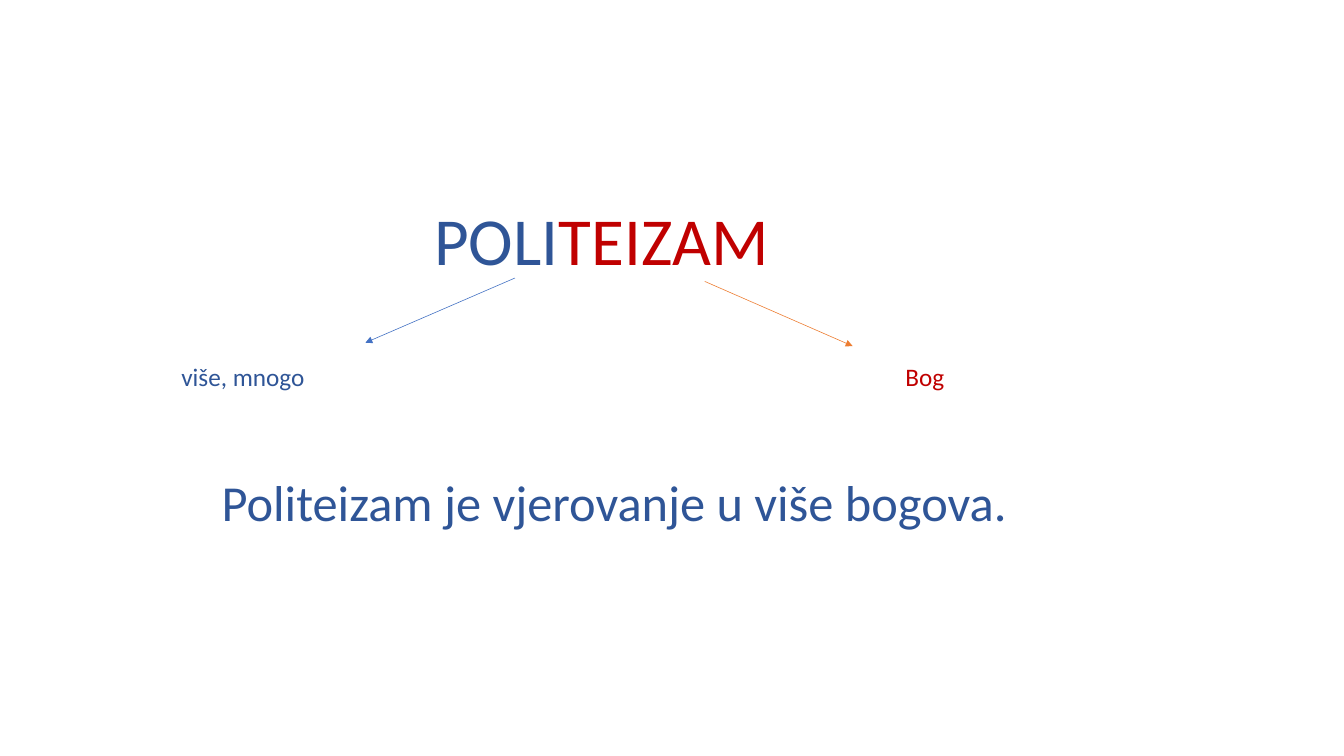
from lxml import etree
from pptx import Presentation
from pptx.dml.color import RGBColor
from pptx.enum.shapes import MSO_CONNECTOR
from pptx.enum.text import MSO_ANCHOR, MSO_AUTO_SIZE, PP_ALIGN
from pptx.oxml.ns import qn
from pptx.util import Inches, Pt

BLUE = RGBColor(0x2F, 0x55, 0x97)
RED = RGBColor(0xC0, 0x00, 0x00)
ARROW_BLUE = RGBColor(0x44, 0x72, 0xC4)
ARROW_ORANGE = RGBColor(0xED, 0x7D, 0x31)


def add_run(p, text, size, color):
    r = p.add_run()
    r.text = text
    r.font.name = "Calibri"
    r.font.size = Pt(size)
    r.font.color.rgb = color


prs = Presentation()
prs.slide_width = Inches(16)
prs.slide_height = Inches(9)
s = prs.slides.add_slide(prs.slide_layouts[5])

title = s.shapes.title
title.left, title.top = Inches(5.07), Inches(1.94)
title.width, title.height = Inches(8.4), Inches(1.43)
tf = title.text_frame
tf.auto_size = MSO_AUTO_SIZE.NONE
tf.vertical_anchor = MSO_ANCHOR.BOTTOM
p = tf.paragraphs[0]
p.alignment = PP_ALIGN.LEFT
add_run(p, "POLI", 57.6, BLUE)
add_run(p, "TEIZAM", 57.6, RED)

arrows = [
    (6.13, 3.31, 4.35, 4.08, ARROW_BLUE),
    (8.39, 3.35, 10.15, 4.12, ARROW_ORANGE),
]
for x1, y1, x2, y2, color in arrows:
    arrow = s.shapes.add_connector(
        MSO_CONNECTOR.STRAIGHT, Inches(x1), Inches(y1), Inches(x2), Inches(y2))
    arrow.line.color.rgb = color
    arrow.line.width = Pt(0.5)
    etree.SubElement(arrow.line._get_or_add_ln(), qn("a:tailEnd"), type="triangle")
    etree.SubElement(arrow._element.spPr, qn("a:effectLst"))

texts = [
    ("više, mnogo", 2.06, 4.25, 4.08, 0.46, 21.6, BLUE),
    ("Bog", 10.68, 4.25, 2.37, 0.46, 21.6, RED),
    ("Politeizam je vjerovanje u više bogova.", 2.54, 5.56, 10.71, 0.83, 43.2, BLUE),
]
for text, x, y, w, h, size, color in texts:
    sp = s.shapes.add_textbox(Inches(x), Inches(y), Inches(w), Inches(h))
    tf = sp.text_frame
    tf.word_wrap = True
    tf.auto_size = MSO_AUTO_SIZE.SHAPE_TO_FIT_TEXT
    add_run(tf.paragraphs[0], text, size, color)

prs.save("out.pptx")
